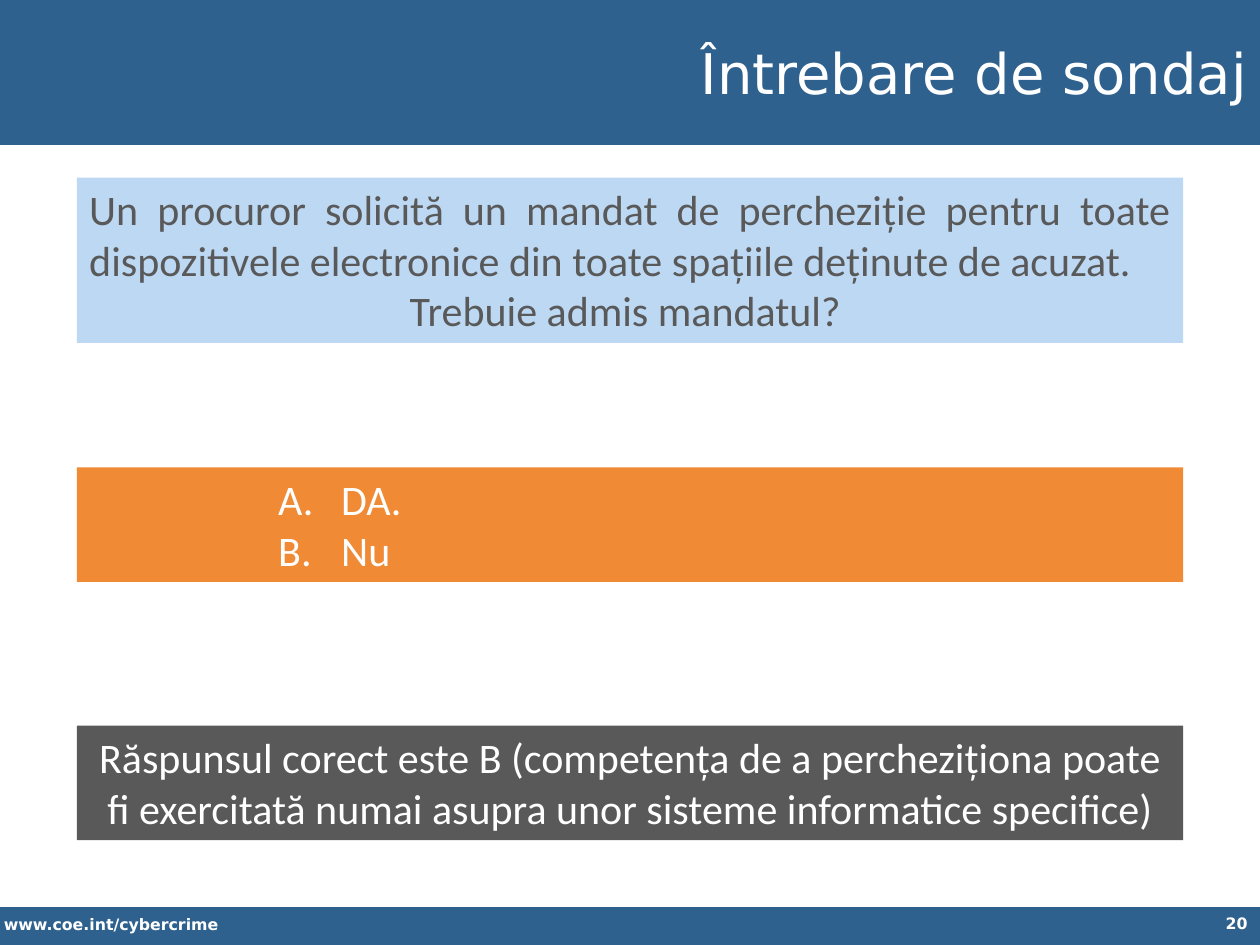
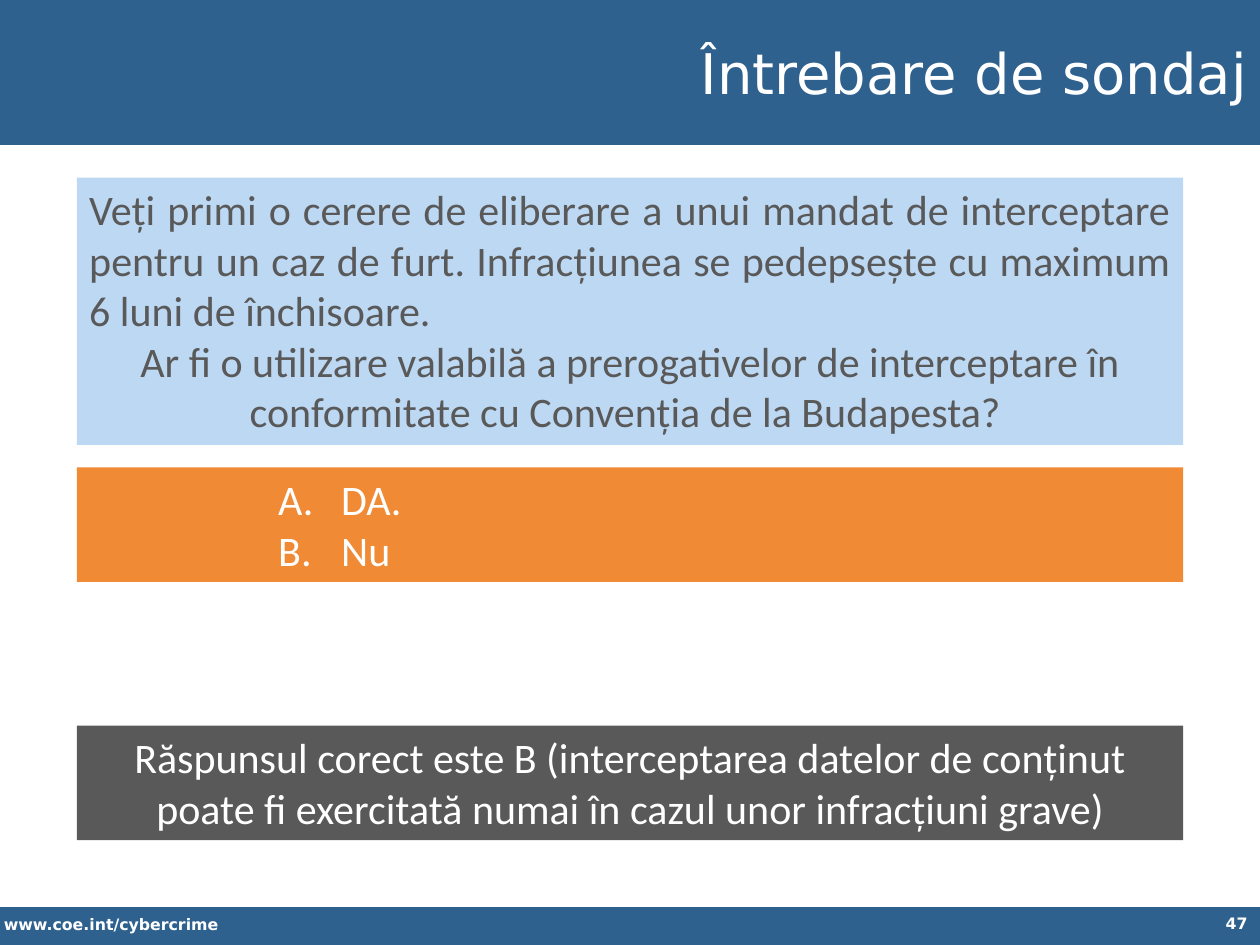
from dataclasses import dataclass

from lxml import etree
from pptx import Presentation
from pptx import util as u
from pptx.dml.color import RGBColor
from pptx.enum import shapes, text
from pptx.oxml import ns

Pt = u.Pt
ALIGN = text.PP_ALIGN


@dataclass(frozen=True)
class Theme:
    band: str = "2F618F"
    question: str = "BDD8F3"
    options: str = "F08A34"
    answer: str = "595959"
    dark_text: str = "595959"
    light_text: str = "FFFFFF"
    heading_font: str = "DejaVu Sans"
    body_font: str = "Calibri"
    title_size: float = 32
    body_size: float = 24
    footer_size: float = 9


THEME = Theme()
WIDTH, HEIGHT = 720, 540
HEADER = (0, 0, WIDTH, 82.8)
FOOTER = (0, 518.4, WIDTH, 21.6)
BODY_LEFT, BODY_WIDTH = 43.9, 632.2
QUESTION_TOP, OPTIONS_TOP, ANSWER_TOP = 101.5, 267.1, 414.7
LINE_HEIGHT, BODY_PADDING = 29.1, 7.2  # one 24 pt line; top and bottom insets

POLLS = [
    dict(
        page="20",
        case="Un procuror solicită un mandat de percheziție pentru toate "
             "dispozitivele electronice din toate spațiile deținute de acuzat. ",
        question="Trebuie admis mandatul? ",
        question_lines=3,
        answer="Răspunsul corect este B (competența de a percheziționa poate "
               "fi exercitată numai asupra unor sisteme informatice specifice)",
    ),
    dict(
        page="47",
        case="Veți primi o cerere de eliberare a unui mandat de interceptare "
             "pentru un caz de furt. Infracțiunea se pedepsește cu maximum "
             "6 luni de închisoare. ",
        question="Ar fi o utilizare valabilă a prerogativelor de interceptare în "
                 "conformitate cu Convenția de la Budapesta? ",
        question_lines=5,
        answer="Răspunsul corect este B (interceptarea datelor de conținut "
               "poate fi exercitată numai în cazul unor infracțiuni grave)",
    ),
]


def add_panel(slide, box, fill):
    """Add a flat filled rectangle."""
    panel = slide.shapes.add_shape(shapes.MSO_SHAPE.RECTANGLE, *map(Pt, box))
    panel.shadow.inherit = False
    panel.fill.solid()
    panel.fill.fore_color.rgb = RGBColor.from_string(fill)
    panel.line.fill.background()
    return panel


def write(holder, lines, font, size, color, bold=False,
          anchor=text.MSO_ANCHOR.TOP):
    """Write (wording, alignment) lines, one paragraph each."""
    frame = holder.text_frame
    frame.word_wrap = True
    frame.vertical_anchor = anchor
    for number, (wording, alignment) in enumerate(lines):
        line = frame.add_paragraph() if number else frame.paragraphs[0]
        line.alignment = alignment
        run = line.add_run()
        run.text = wording
        run.font.name, run.font.size, run.font.bold = font, Pt(size), bold
        run.font.color.rgb = RGBColor.from_string(color)
    return frame


def add_header(slide, box, title):
    left, top, width, height = box
    add_panel(slide, box, THEME.band)
    title_box = (left + 158.4, top + 5, width - 158.4, height - 10)
    write(add_panel(slide, title_box, THEME.band), [(title, ALIGN.RIGHT)],
          THEME.heading_font, THEME.title_size, THEME.light_text,
          anchor=text.MSO_ANCHOR.MIDDLE)


def add_footer(slide, box, page):
    left, top, width, height = box
    add_panel(slide, box, THEME.band)
    site = slide.shapes.add_textbox(Pt(left), Pt(top + 0.7), Pt(248), Pt(18))
    number = slide.shapes.add_textbox(
        Pt(left + width - 162), Pt(top), Pt(162), Pt(height))
    for holder, wording, alignment in (
            (site, "www.coe.int/cybercrime", ALIGN.LEFT),
            (number, page, ALIGN.RIGHT)):
        write(holder, [(wording, alignment)], THEME.heading_font,
              THEME.footer_size, THEME.light_text, bold=True)
    site.text_frame.margin_left = Pt(2.2)


def body_box(top, line_count):
    return BODY_LEFT, top, BODY_WIDTH, line_count * LINE_HEIGHT + BODY_PADDING


def add_body_panel(slide, box, fill, color, lines):
    return write(add_panel(slide, box, fill), lines,
                 THEME.body_font, THEME.body_size, color)


def add_options(slide, box, options):
    """Add the answer choices, lettered A., B., ..."""
    frame = add_body_panel(slide, box, THEME.options, THEME.light_text,
                           [(option, ALIGN.LEFT) for option in options])
    for choice in frame.paragraphs:
        choice.level = 3
        props = choice._p.get_or_add_pPr()
        props.set("marL", str(Pt(144)))
        props.set("indent", str(Pt(-36)))
        etree.SubElement(props, ns.qn("a:buFont"), typeface="+mj-lt")
        etree.SubElement(props, ns.qn("a:buAutoNum"), type="alphaUcPeriod")


def add_poll_slide(deck, poll):
    slide = deck.slides.add_slide(deck.slide_layouts[6])
    # Shared bands
    add_header(slide, HEADER, "Întrebare de sondaj")
    add_footer(slide, FOOTER, poll["page"])
    # Question, choices and correct answer
    add_body_panel(slide, body_box(QUESTION_TOP, poll["question_lines"]),
                   THEME.question, THEME.dark_text,
                   [(poll["case"], ALIGN.JUSTIFY),
                    (poll["question"], ALIGN.CENTER)])
    add_options(slide, body_box(OPTIONS_TOP, 2), ["DA.", "Nu"])
    add_body_panel(slide, body_box(ANSWER_TOP, 2), THEME.answer,
                   THEME.light_text, [(poll["answer"], ALIGN.CENTER)])


def main():
    deck = Presentation()
    deck.slide_width, deck.slide_height = Pt(WIDTH), Pt(HEIGHT)
    for poll in POLLS:
        add_poll_slide(deck, poll)
    deck.save("out.pptx")


if __name__ == "__main__":
    main()
